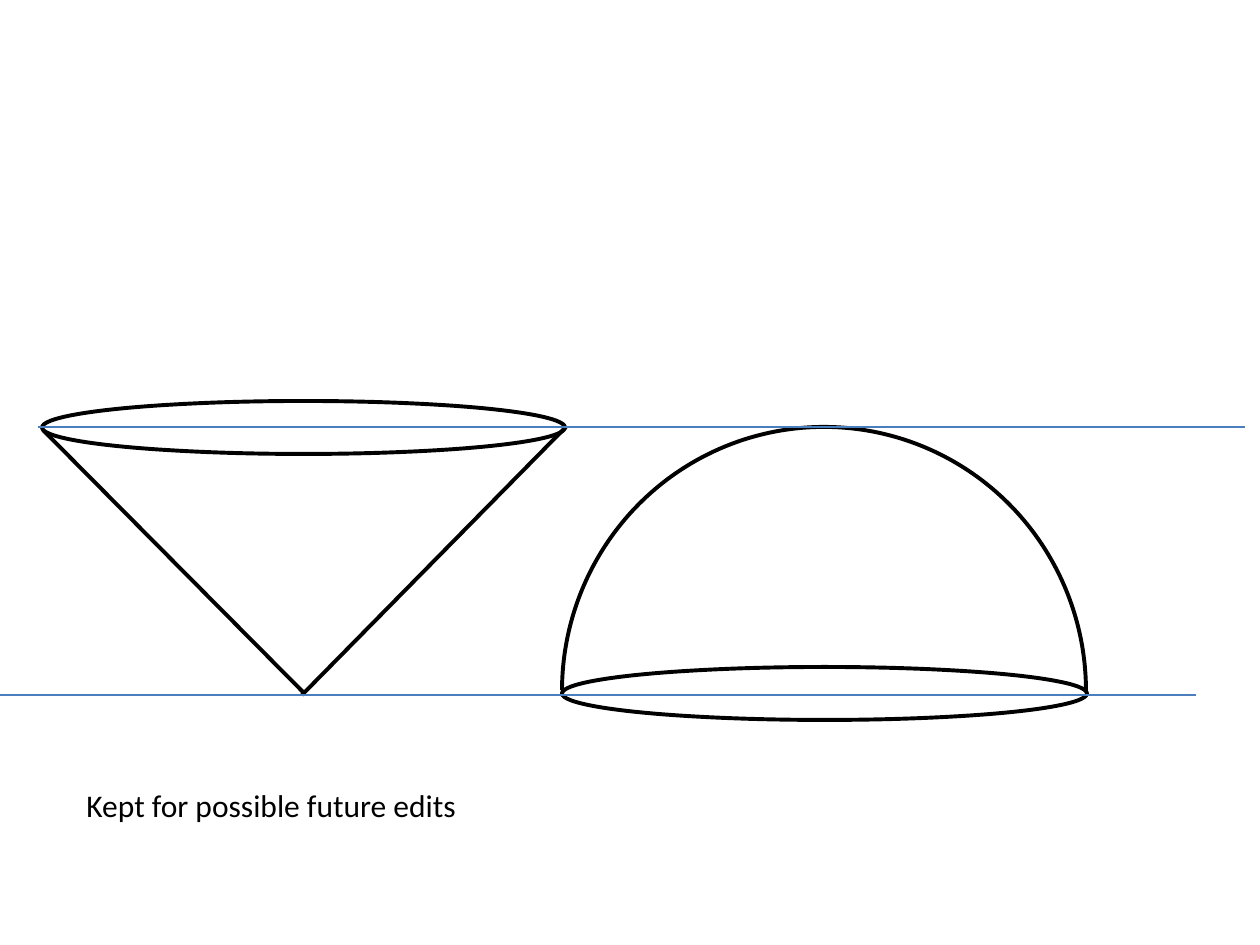
from lxml.etree import SubElement
from pptx import Presentation
from pptx.dml.color import RGBColor
from pptx.enum.shapes import MSO_CONNECTOR, MSO_SHAPE
from pptx.oxml.ns import qn
from pptx.util import Inches, Pt

PX = Inches(1) / 126
BLACK = RGBColor(0x00, 0x00, 0x00)
BLUE = RGBColor(0x4B, 0x7E, 0xBC)


def outline(shapes, kind, *box):
    """Add an unfilled shape with a thick black edge; box is in px."""
    shape = shapes.add_shape(kind, *[round(n * PX) for n in box])
    shape.shadow.inherit = False
    shape.fill.background()
    shape.line.color.rgb = BLACK
    shape.line.width = Pt(2.25)
    return shape


def add_line(shapes, color, width, *ends):
    """Add a straight line; ends are x1, y1, x2, y2 in px."""
    line = shapes.add_connector(MSO_CONNECTOR.STRAIGHT, *[round(n * PX) for n in ends])
    line.line.color.rgb = color
    line.line.width = Pt(width)
    SubElement(line._element.spPr, qn("a:effectLst"))


deck = Presentation()
deck.slide_width = round(1260 * PX)
deck.slide_height = round(945 * PX)
slide = deck.slides.add_slide(deck.slide_layouts[6])

# Dome
dome = slide.shapes.add_group_shape().shapes
arc = outline(dome, MSO_SHAPE.ARC, 562, 427, 524, 528)
arc.adjustments[0] = 108.1  # start angle, just past 180 degrees
arc.adjustments[1] = 0
outline(dome, MSO_SHAPE.OVAL, 562, 667, 525, 53)

# Cone
cone = slide.shapes.add_group_shape().shapes
outline(cone, MSO_SHAPE.OVAL, 42, 401, 523, 53)
add_line(cone, BLACK, 2.25, 43, 430, 304, 693)
add_line(cone, BLACK, 2.25, 566, 427, 302, 695)

# Guide lines
for left, y in [(38, 427), (-11, 695)]:
    add_line(slide.shapes, BLUE, 0.75, left, y, left + 1207, y)

# Note
note = slide.shapes.add_textbox(*[round(n * PX) for n in (74, 780, 399, 50)])
frame = note.text_frame
frame.word_wrap = False
frame.text = "Kept for possible future edits"
font = frame.paragraphs[0].runs[0].font
font.name = "Calibri"
font.size = Pt(18)
font.color.rgb = BLACK

deck.save("out.pptx")
